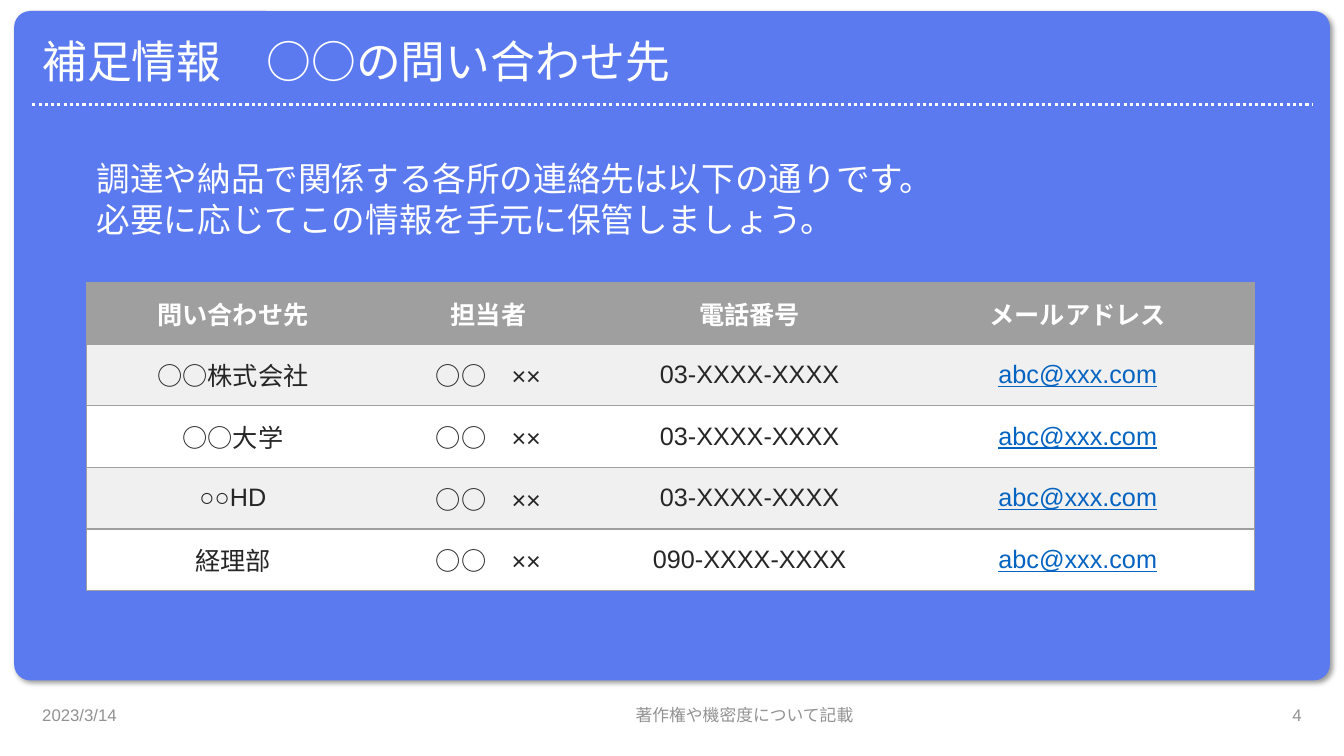
from dataclasses import dataclass

from lxml.etree import SubElement
from pptx import Presentation
from pptx.dml.color import RGBColor
from pptx.enum.dml import MSO_LINE_DASH_STYLE as Dash
from pptx.enum.shapes import MSO_CONNECTOR as Connector, MSO_SHAPE as Shape
from pptx.enum.text import MSO_ANCHOR as Anchor, PP_ALIGN as Align
from pptx.oxml.ns import qn
from pptx.util import Pt

PX = 9144  # EMU per px, 100 px to the inch
NO_STYLE = "{2D5ABB26-0587-4C30-8999-92F81FD0307C}"


@dataclass(frozen=True)
class Theme:
    font: str = "Arial"
    panel: str = "5B7AF0"
    white: str = "FFFFFF"
    ink: str = "262626"
    link: str = "0563C1"
    muted: str = "929292"
    rule: str = "9F9F9F"
    band: str = "F0F0F0"
    shadow: str = "000000"
    title_size: int = 32
    lead_size: int = 24
    cell_size: int = 18
    footer_size: int = 12


THEME = Theme()

HEADINGS = ["問い合わせ先", "担当者", "電話番号", "メールアドレス"]
PERSON, MAIL = "○○　××", "abc@xxx.com"
CONTACTS = [
    ("○○株式会社", "03-XXXX-XXXX"),
    ("○○大学", "03-XXXX-XXXX"),
    ("○○HD", "03-XXXX-XXXX"),
    ("経理部", "090-XXXX-XXXX"),
]
COLUMN_WIDTHS = [290, 217, 301, 350]
LEAD = "調達や納品で関係する各所の連絡先は以下の通りです。\n必要に応じてこの情報を手元に保管しましょう。"


def color(value):
    return RGBColor.from_string(value)


def emu(*lengths):
    return [length * PX for length in lengths]


def write(frame, text, *, size, ink, align=Align.LEFT, anchor=Anchor.MIDDLE,
          bold=False, underline=False, spacing=None):
    """Fill a text frame, one paragraph per line of text."""
    frame.text = text
    frame.word_wrap = True
    frame.vertical_anchor = anchor
    for para in frame.paragraphs:
        para.alignment = align
        para.line_spacing = spacing
        for span in para.runs:
            font = span.font
            font.name, font.size, font.bold = THEME.font, Pt(size), bold
            font.underline = underline
            font.color.rgb = color(ink)


def add_text(page, box, text, **format):
    write(page.shapes.add_textbox(*emu(*box)).text_frame, text, **format)


def add_panel(page, box):
    panel = page.shapes.add_shape(Shape.ROUNDED_RECTANGLE, *emu(*box))
    panel.adjustments[0] = 0.024
    panel.fill.solid()
    panel.fill.fore_color.rgb = color(THEME.panel)
    panel.line.fill.background()
    # Soft shadow to the lower right
    panel.shadow.inherit = False
    effects = panel._element.spPr.find(qn("a:effectLst"))
    shadow = SubElement(effects, qn("a:outerShdw"), blurRad=str(Pt(4)),
                        dist=str(Pt(3)), dir="2700000", algn="tl", rotWithShape="0")
    tint = SubElement(shadow, qn("a:srgbClr"), val=THEME.shadow)
    SubElement(tint, qn("a:alpha"), val="40000")


def add_header(page, box, text):
    left, top, width, height = box
    # Dotted rule under the title
    rule_top = top + height + 8
    rule = page.shapes.add_connector(
        Connector.STRAIGHT, *emu(left, rule_top, left + width, rule_top))
    rule.line.color.rgb = color(THEME.white)
    rule.line.width = Pt(2.25)
    rule.line.dash_style = Dash.ROUND_DOT
    SubElement(rule._element.spPr, qn("a:effectLst"))
    # Title, brought in front of the panel
    title = page.shapes.title
    title.left, title.top, title.width, title.height = emu(*box)
    write(title.text_frame, text, size=THEME.title_size, ink=THEME.white, spacing=0.9)
    page.shapes._spTree.append(title._element)


def add_borders(cell, sides):
    for side in sides:
        line = SubElement(cell._tc.get_or_add_tcPr(), qn(f"a:ln{side}"), w=str(Pt(1)))
        fill = SubElement(line, qn("a:solidFill"))
        SubElement(fill, qn("a:srgbClr"), val=THEME.rule)


def add_contacts(page, box):
    rows = [HEADINGS] + [[place, PERSON, phone, MAIL] for place, phone in CONTACTS]
    last = len(HEADINGS) - 1
    table = page.shapes.add_table(len(rows), len(HEADINGS), *emu(*box)).table
    table.first_row = table.horz_banding = False
    table._tbl.tblPr.find(qn("a:tableStyleId")).text = NO_STYLE
    for column, width in zip(table.columns, COLUMN_WIDTHS):
        column.width = width * PX

    for r, row in enumerate(rows):
        table.rows[r].height = box[3] * PX // len(rows)
        heading = r == 0
        fill = THEME.rule if heading else THEME.band if r % 2 else THEME.white
        for c, text in enumerate(row):
            cell = table.cell(r, c)
            mail = c == last and not heading
            ink = THEME.white if heading else THEME.link if mail else THEME.ink
            write(cell.text_frame, text, size=THEME.cell_size, ink=ink,
                  align=Align.CENTER, bold=heading, underline=mail)
            cell.vertical_anchor = Anchor.MIDDLE
            add_borders(cell, ("L" if c == 0 else "") + ("R" if c == last else "") + "TB")
            cell.fill.solid()
            cell.fill.fore_color.rgb = color(fill)


def add_footer(page, box):
    left, top, width, height = box
    parts = [
        (0, 249, "2023/3/14", Align.LEFT),
        (271, 871, "著作権や機密度について記載", Align.CENTER),
        (width - 100, 100, "4", Align.RIGHT),
    ]
    for offset, part_width, text, align in parts:
        add_text(page, (left + offset, top, part_width, height), text,
                 size=THEME.footer_size, ink=THEME.muted, align=align)


def add_contact_page(deck):
    page = deck.slides.add_slide(deck.slide_layouts[5])
    add_panel(page, (14, 11, 1305, 664))
    add_header(page, (32, 30, 1269, 66), "補足情報　○○の問い合わせ先")
    add_footer(page, (32, 689, 1269, 40))
    add_contacts(page, (86, 280, 1158, 306))
    add_text(page, (86, 152, 1161, 91), LEAD, size=THEME.lead_size,
             ink=THEME.white, anchor=Anchor.TOP)


def main():
    deck = Presentation()
    deck.slide_width, deck.slide_height = emu(1333, 750)
    add_contact_page(deck)
    deck.save("out.pptx")


if __name__ == "__main__":
    main()
